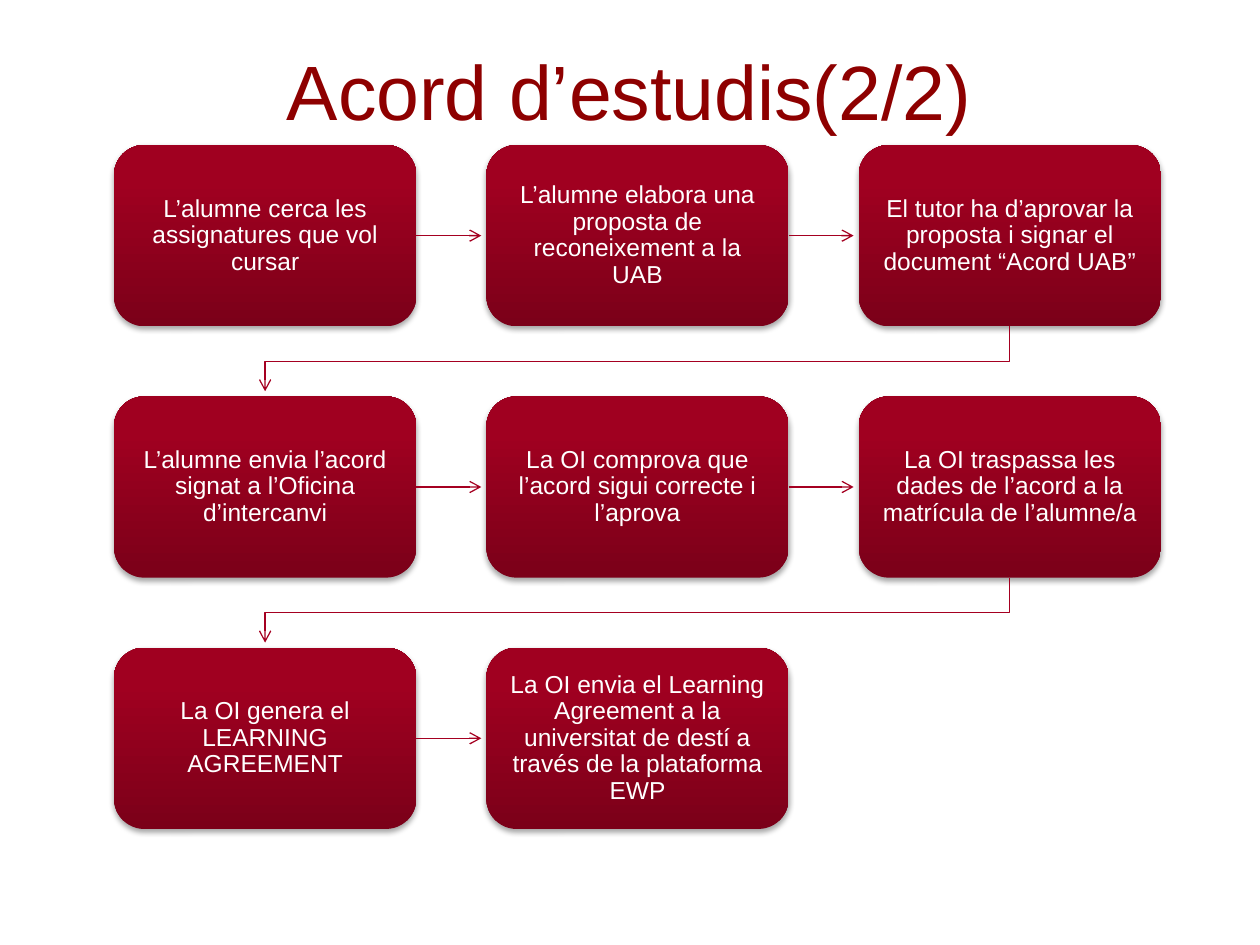
from dataclasses import dataclass

from lxml import etree
from pptx import Presentation
from pptx.dml.color import RGBColor
from pptx.enum.shapes import MSO_CONNECTOR, MSO_SHAPE
from pptx.enum.text import MSO_ANCHOR, PP_ALIGN
from pptx.oxml import parse_xml
from pptx.oxml.ns import nsdecls, qn
from pptx.util import Emu, Pt

STRAIGHT = MSO_CONNECTOR.STRAIGHT
ROUNDED = MSO_SHAPE.ROUNDED_RECTANGLE
MIDDLE = MSO_ANCHOR.MIDDLE
CENTER = PP_ALIGN.CENTER
RIGHT_SIDE = 3
PX = 914400 / 126


@dataclass(frozen=True)
class Theme:
    """Colours, font and type sizes of the slide."""
    title: RGBColor = RGBColor(0x8E, 0x00, 0x00)
    line: RGBColor = RGBColor(0xA5, 0x00, 0x21)
    dark: RGBColor = RGBColor(0x7B, 0x00, 0x19)
    light: RGBColor = RGBColor(0xA0, 0x00, 0x20)
    white: RGBColor = RGBColor(0xFF, 0xFF, 0xFF)
    font: str = "Arial"
    title_size: int = 44
    step_size: int = 14


THEME = Theme()
STEPS = [
    "L’alumne cerca les assignatures que vol cursar",
    "L’alumne elabora una proposta de reconeixement a la UAB",
    "El tutor ha d’aprovar la proposta i signar el document “Acord UAB”",
    "L’alumne envia l’acord signat a l’Oficina d’intercanvi",
    "La OI comprova que l’acord sigui correcte i l’aprova",
    "La OI traspassa les dades de l’acord a la matrícula de l’alumne/a",
    "La OI genera el LEARNING AGREEMENT",
    "La OI envia el Learning Agreement a la universitat de destí a través de la plataforma EWP",
]


def px(value):
    """Turn pixels into EMU."""
    return Emu(round(value * PX))


def write_text(shape, text, size, color, inset, spacing):
    """Write one centred paragraph into a shape."""
    frame = shape.text_frame
    frame.word_wrap = True
    frame.vertical_anchor = MIDDLE
    frame.margin_left = frame.margin_right = px(inset)
    frame.margin_top = frame.margin_bottom = px(inset)
    para = frame.paragraphs[0]
    para.alignment = CENTER
    para.line_spacing = spacing
    span = para.add_run()
    span.text = text
    span.font.name = THEME.font
    span.font.size = Pt(size)
    span.font.color.rgb = color


def style_arrow(arrow):
    """Give a line its colour, width and open arrowhead, without shadow."""
    arrow.line.color.rgb = THEME.line
    arrow.line.width = Pt(0.75)
    properties = arrow.element.spPr
    head = etree.SubElement(properties.find(qn("a:ln")), qn("a:tailEnd"))
    head.set("type", "arrow")
    if properties.find(qn("a:effectLst")) is None:
        etree.SubElement(properties, qn("a:effectLst"))


def add_title(page, left, top, width, height):
    """Place the slide title in its box."""
    box = page.shapes.add_textbox(px(left), px(top), px(width), px(height))
    write_text(box, "Acord d’estudis(2/2)", THEME.title_size, THEME.title, 0, 1.0)


def add_step(page, text, left, top, width, height):
    """Place one rounded step with gradient and soft shadow."""
    box = page.shapes.add_shape(ROUNDED, px(left), px(top), px(width), px(height))
    box.line.fill.background()
    box.fill.gradient()
    box.fill.gradient_angle = 90
    for stop, position, color in zip(
        box.fill.gradient_stops, (0, 0.8), (THEME.dark, THEME.light)
    ):
        stop.position = position
        stop.color.rgb = color
    box.element.spPr.append(parse_xml(
        f'<a:effectLst {nsdecls("a")}>'
        f'<a:outerShdw blurRad="{Pt(3.1)}" dist="{Pt(1.8)}" dir="5400000" rotWithShape="0">'
        '<a:srgbClr val="000000"><a:alpha val="35000"/></a:srgbClr>'
        '</a:outerShdw></a:effectLst>'
    ))
    write_text(box, text, THEME.step_size, THEME.white, 14, 0.9)
    return box


def add_side_arrow(page, box, length):
    """Draw an arrow from the right side of a step towards the next one."""
    start = box.left + box.width
    middle = box.top + box.height // 2
    arrow = page.shapes.add_connector(
        STRAIGHT, start, middle, start + px(length), middle
    )
    arrow.begin_connect(box, RIGHT_SIDE)
    style_arrow(arrow)


def add_return_arrow(page, box, first_center, gap, length):
    """Draw a bent arrow from the end of a row to the start of the next."""
    start = box.left + box.width // 2
    bottom = box.top + box.height
    turn = bottom + px(gap / 2)
    builder = page.shapes.build_freeform(start, bottom, scale=1.0)
    builder.add_line_segments(
        [(start, turn), (first_center, turn), (first_center, bottom + px(length))],
        close=False,
    )
    arrow = builder.convert_to_shape()
    arrow.shadow.inherit = False
    arrow.fill.background()
    style_arrow(arrow)


def add_process(page, left, top, width, height, columns=3, rows=3, gap=70):
    """Lay out the steps row by row and link each to the next."""
    step_width = (width - (columns - 1) * gap) / columns
    step_height = (height - (rows - 1) * gap) / rows
    length = gap - 5
    for index, text in enumerate(STEPS):
        row, column = divmod(index, columns)
        box = add_step(
            page, text,
            left + column * (step_width + gap), top + row * (step_height + gap),
            step_width, step_height,
        )
        if index == len(STEPS) - 1:
            continue
        if column < columns - 1:
            add_side_arrow(page, box, length)
        else:
            add_return_arrow(page, box, px(left + step_width / 2), gap, length)


def main():
    """Build the slide and save the deck."""
    deck = Presentation()
    deck.slide_width, deck.slide_height = px(1260), px(945)
    page = deck.slides.add_slide(deck.slide_layouts[6])
    add_title(page, 94, 35, 1071, 110)
    add_process(page, 114, 145, 1047, 684)
    deck.save("out.pptx")


if __name__ == "__main__":
    main()
